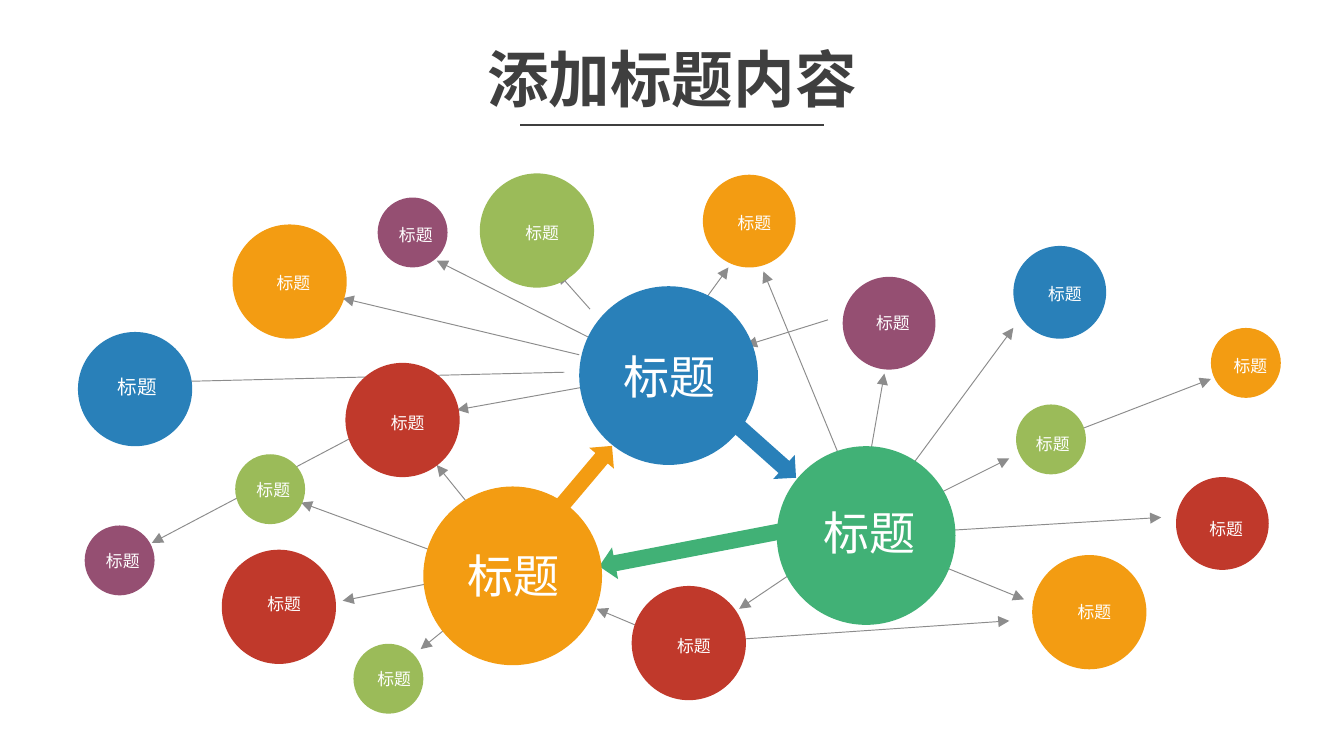
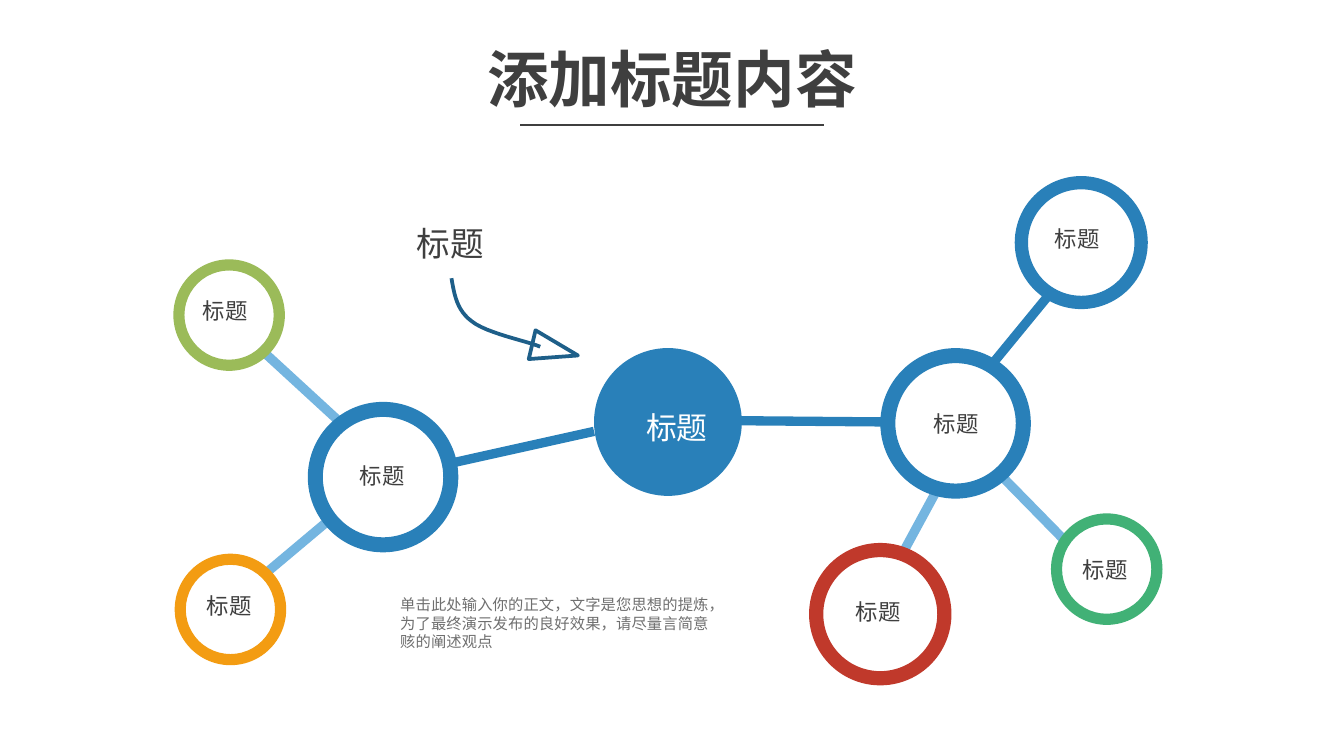
from itertools import chain
from math import ceil

from lxml.etree import SubElement
from pptx import Presentation
from pptx.dml.color import RGBColor
from pptx.enum.shapes import MSO_CONNECTOR, MSO_SHAPE
from pptx.enum.text import MSO_ANCHOR, MSO_AUTO_SIZE, PP_ALIGN
from pptx.oxml.ns import qn
from pptx.util import Pt

# Shared look: 100 px to the inch, page 16:9
PX = 9144
PAGE_WIDTH = 1000
PAGE_HEIGHT = PAGE_WIDTH * 9 / 16
FONT = "Arial"
BLUE, ORANGE, GREEN = "2980B9", "F39C12", "41B176"
RED, LIME, PURPLE = "C0392B", "9BBB59", "954F72"
LIGHT_BLUE, DARK_BLUE = "74B5E0", "1E5F89"
DARK, GRAY, LINE_GRAY, WHITE = "3F3F3F", "6F6F6F", "8C8C8C", "FFFFFF"
TITLE = "添加标题内容"
LABEL = "标题"

# Network page: block arrows (left, top, width, height, rotation, color)
BLOCK_ARROWS = [
    (559, 308, 24, 57, 311.7, BLUE),
    (425, 325, 24, 57, 220.2, ORANGE),
    (506, 334, 24, 147, 79.1, GREEN),
]
# Thin arrows (from x, from y, to x, to y)
THIN_ARROWS = [
    # around the blue hub
    (526, 221, 542, 199), (439, 230, 415, 203), (440, 252, 325, 194),
    (431, 264, 255, 222), (440, 287, 340, 305), (420, 277, 130, 284),
    (261, 326, 113, 404),
    # around the orange hub
    (325, 411, 224, 374), (355, 383, 325, 346), (325, 433, 255, 447),
    (340, 461, 313, 483),
    # around the green hub
    (616, 238, 555, 257), (545, 476, 751, 462), (624, 338, 568, 202),
    (482, 469, 444, 453), (593, 424, 550, 453), (693, 418, 762, 446),
    (700, 395, 864, 385), (693, 370, 751, 341), (678, 347, 754, 244),
    (647, 341, 658, 278), (805, 319, 901, 282),
]
# Circles by diameter: (left, top, color)
CIRCLES = {
    133: [(315, 362, ORANGE), (578, 332, GREEN), (431, 213, BLUE)],
    69: [(523, 130, ORANGE), (754, 183, BLUE), (627, 206, PURPLE),
         (875, 355, RED)],
    85: [(173, 167, ORANGE), (165, 409, RED), (470, 436, RED),
         (768, 413, ORANGE), (58, 247, BLUE), (357, 129, LIME),
         (257, 270, RED)],
    52: [(281, 147, PURPLE), (175, 338, LIME), (63, 391, PURPLE),
         (756, 301, LIME), (901, 244, ORANGE), (263, 479, LIME)],
}
# Labels by text size: (left, top)
NETWORK_LABELS = {
    10.5: [(78, 274)],
    9: [(196, 198), (287, 162), (381, 161), (539, 153), (642, 228),
        (770, 206), (908, 260), (181, 352), (69, 405), (189, 437),
        (271, 493), (494, 468), (792, 443), (890, 381), (761, 318),
        (281, 302)],
    24.75: [(454, 254), (338, 402), (603, 370)],
}

# Molecule page: bonds by color (from x, from y, to x, to y)
BONDS = {
    LIGHT_BLUE: [(193, 259, 254, 315), (196, 428, 246, 386),
                 (746, 355, 794, 404), (698, 363, 672, 411)],
    BLUE: [(780, 220, 739, 270), (545, 313, 662, 314),
           (334, 345, 442, 321)],
}
# Rings (left, top, diameter, color)
RINGS = [
    (129, 193, 83, LIME), (130, 412, 83, ORANGE), (782, 382, 83, GREEN),
    (602, 404, 106, RED), (755, 131, 99, BLUE), (655, 259, 112, BLUE),
    (229, 299, 112, BLUE),
]
RING_LABELS = [(258, 339), (685, 300), (775, 163), (796, 409), (627, 440),
               (141, 216), (144, 436)]
# Pointer: start, then cubic pieces (control, control, end)
POINTER_START = (336, 207)
POINTER_CURVES = [
    ((338, 219), (340, 231), (351, 239)),
    ((362, 248), (393, 254), (402, 258)),
]
BODY = "单击此处输入你的正文，文字是您思想的提炼，为了最终演示发布的良好效果，请尽量言简意赅的阐述观点"


def color_of(hex_text):
    return RGBColor.from_string(hex_text)


def scaled(*lengths):
    return [round(length * PX) for length in lengths]


def set_values(target, values):
    for name, value in values.items():
        setattr(target, name, value)


def style_span(span, size, color, bold=False):
    set_values(span.font, {"name": FONT, "size": Pt(size), "bold": bold})
    span.font.color.rgb = color_of(color)


def style_shape(shape, fill=None, line=None, width=2):
    shape.shadow.inherit = False
    if fill:
        shape.fill.solid()
        shape.fill.fore_color.rgb = color_of(fill)
    else:
        shape.fill.background()
    if line:
        shape.line.color.rgb = color_of(line)
        shape.line.width = Pt(width)
    else:
        shape.line.fill.background()


def add_figure(page, kind, frame, rotation=0, **style):
    shape = page.shapes.add_shape(kind, *scaled(*frame))
    shape.rotation = rotation
    style_shape(shape, **style)
    return shape


def add_line(page, ends, color, width, arrow=False):
    line = page.shapes.add_connector(MSO_CONNECTOR.STRAIGHT, *scaled(*ends))
    line.line.color.rgb = color_of(color)
    line.line.width = Pt(width)
    properties = line.element.spPr
    if arrow:
        SubElement(properties.find(qn("a:ln")), qn("a:tailEnd"), type="triangle")
    SubElement(properties, qn("a:effectLst"))


def add_text(page, frame, text, size, color, wrap=False, inset=True):
    box = page.shapes.add_textbox(*scaled(*frame))
    values = {"word_wrap": wrap, "auto_size": MSO_AUTO_SIZE.SHAPE_TO_FIT_TEXT}
    if not inset:
        sides = ("left", "top", "right", "bottom")
        values.update({f"margin_{side}": 0 for side in sides})
    set_values(box.text_frame, values)
    span = box.text_frame.paragraphs[0].add_run()
    span.text = text
    style_span(span, size, color)


def add_label(page, left, top, size, color, inset=True):
    """Fit the frame to the two characters of the label."""
    pad = 10 if inset else 0
    width = ceil(len(LABEL) * size / 0.72) + 2 * pad
    height = ceil(1.2 * size / 0.72) + pad
    add_text(page, (left, top, width, height), LABEL, size, color, inset=inset)


def add_page(deck):
    """Start a page with its title and the rule below it."""
    page = deck.slides.add_slide(deck.slide_layouts[5])
    add_line(page, (387, 93, 613, 93), DARK, 1)
    title = page.shapes.title
    names = ("left", "top", "width", "height")
    set_values(title, dict(zip(names, scaled(69, 30, 862, 63))))
    set_values(title.text_frame, {
        "vertical_anchor": MSO_ANCHOR.MIDDLE,
        "auto_size": MSO_AUTO_SIZE.NONE,
        "word_wrap": True,
    })
    para = title.text_frame.paragraphs[0]
    set_values(para, {"alignment": PP_ALIGN.CENTER, "line_spacing": 0.9})
    span = para.add_run()
    span.text = TITLE
    style_span(span, 33, DARK, bold=True)
    return page


def curve_points(start, curves, steps=12):
    """Walk along the cubic pieces in equal steps."""
    for first, second, end in curves:
        for step in range(1, steps + 1):
            t = step / steps
            weights = ((1 - t) ** 3, 3 * t * (1 - t) ** 2,
                       3 * t * t * (1 - t), t ** 3)
            corners = (start, first, second, end)
            yield tuple(sum(weight * corner[axis]
                            for weight, corner in zip(weights, corners))
                        for axis in (0, 1))
        start = end


def build_network(deck):
    page = add_page(deck)
    for *frame, rotation, color in BLOCK_ARROWS:
        add_figure(page, MSO_SHAPE.DOWN_ARROW, frame, rotation, fill=color)
    for ends in THIN_ARROWS:
        add_line(page, ends, LINE_GRAY, 0.5, arrow=True)
    for diameter, circles in CIRCLES.items():
        for left, top, color in circles:
            frame = (left, top, diameter, diameter)
            add_figure(page, MSO_SHAPE.OVAL, frame, fill=color)
    for size, places in NETWORK_LABELS.items():
        for left, top in places:
            add_label(page, left, top, size, WHITE)


def build_molecule(deck):
    page = add_page(deck)
    for color, bonds in BONDS.items():
        for ends in bonds:
            add_line(page, ends, color, 5)
    for left, top, diameter, color in RINGS:
        frame = (left, top, diameter, diameter)
        ring = add_figure(page, MSO_SHAPE.DONUT, frame, fill=color)
        ring.adjustments[0] = 0.1
    add_figure(page, MSO_SHAPE.OVAL, (442, 259, 110, 110), fill=BLUE)
    add_label(page, 471, 299, 16.5, WHITE)
    for left, top in RING_LABELS:
        add_label(page, left, top, 12, DARK)
    add_label(page, 310, 166, 18, DARK, inset=False)

    # Curved pointer and its head
    curve = chain([POINTER_START], curve_points(POINTER_START, POINTER_CURVES))
    start, *points = [scaled(*point) for point in curve]
    builder = page.shapes.build_freeform(*start)
    builder.add_line_segments(points, close=False)
    style_shape(builder.convert_to_shape(), line=DARK_BLUE)
    add_figure(page, MSO_SHAPE.ISOSCELES_TRIANGLE, (402, 243, 22, 35), 103.3,
               line=DARK_BLUE)
    add_text(page, (288, 438, 257, 52), BODY, 8.25, GRAY, wrap=True)


def main():
    deck = Presentation()
    deck.slide_width, deck.slide_height = scaled(PAGE_WIDTH, PAGE_HEIGHT)
    build_network(deck)
    build_molecule(deck)
    deck.save("out.pptx")


if __name__ == "__main__":
    main()
